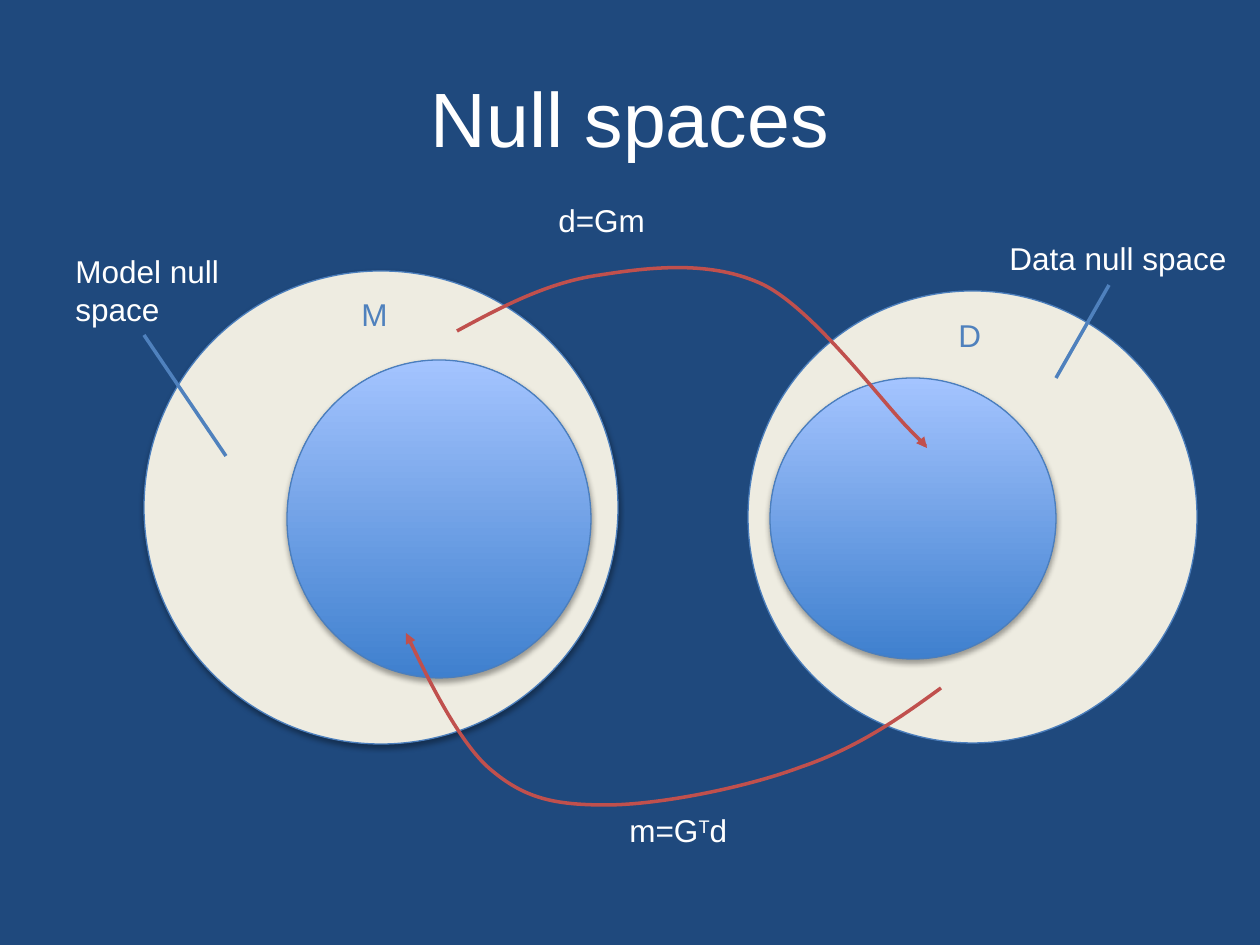
from lxml import etree
from pptx import Presentation
from pptx.dml.color import RGBColor
from pptx.enum.shapes import MSO_CONNECTOR, MSO_SHAPE
from pptx.enum.text import MSO_ANCHOR, MSO_AUTO_SIZE, PP_ALIGN
from pptx.oxml import parse_xml
from pptx.oxml.ns import nsdecls, qn
from pptx.util import Pt

OVAL = MSO_SHAPE.OVAL
STRAIGHT = MSO_CONNECTOR.STRAIGHT
TOP, MIDDLE = MSO_ANCHOR.TOP, MSO_ANCHOR.MIDDLE
LEFT, CENTER = PP_ALIGN.LEFT, PP_ALIGN.CENTER
GROW, FIXED = MSO_AUTO_SIZE.SHAPE_TO_FIT_TEXT, MSO_AUTO_SIZE.NONE

PX = 914400 / 126
NAVY, WHITE, CREAM = "1F497D", "FFFFFF", "EEECE1"
BLUE, OUTLINE, RED = "4F81BD", "4B7EBC", "C0504D"
GRADIENT = ("3F80CE", "A4C4FF")
SHADOW = f"""<a:effectLst {nsdecls('a')}>
  <a:outerShdw blurRad="40000" dist="23000" dir="5400000" rotWithShape="0">
    <a:srgbClr val="000000"><a:alpha val="35000"/></a:srgbClr>
  </a:outerShdw>
</a:effectLst>"""


def emu(*lengths):
    return [round(length * PX) for length in lengths]


def rgb(color):
    return RGBColor.from_string(color)


def add_span(para, text, size=18, color=WHITE, font="Arial", raised=False):
    span = para.add_run()
    span.text = text
    span.font.size = Pt(size)
    span.font.name = font
    span.font.color.rgb = rgb(color)
    if raised:
        span._r.get_or_add_rPr().set("baseline", "30000")


def set_line(shape, color, width):
    shape.line.color.rgb = rgb(color)
    shape.line.width = Pt(width)


def bend(shape):
    """Turn each three straight segments of a freeform into one Bezier curve."""
    outline = next(shape._element.iter(qn("a:path")))
    segments = outline.findall(qn("a:lnTo"))
    for first in range(0, len(segments), 3):
        curve = etree.SubElement(outline, qn("a:cubicBezTo"))
        for segment in segments[first:first + 3]:
            curve.append(segment[0])
            outline.remove(segment)


class SlideBuilder:
    def __init__(self, width, height, background):
        self.deck = Presentation()
        self.deck.slide_width, self.deck.slide_height = emu(width, height)
        self.page = self.deck.slides.add_slide(self.deck.slide_layouts[6])
        self.page.background.fill.solid()
        self.page.background.fill.fore_color.rgb = rgb(background)
        self.shapes = self.page.shapes

    def text(self, place, *parts, anchor=TOP, align=LEFT, fit=GROW, **style):
        """Add a text box; a part is a string or a (string, format) pair."""
        frame = self.shapes.add_textbox(*emu(*place)).text_frame
        frame.word_wrap = True
        frame.auto_size = fit
        frame.vertical_anchor = anchor
        para = frame.paragraphs[0]
        para.alignment = align
        for part in parts:
            words, extra = (part, {}) if isinstance(part, str) else part
            add_span(para, words, **style, **extra)

    def oval(self, place, fill, shadow=True):
        """Fill with one colour, or a (bottom, top) pair as a gradient."""
        shape = self.shapes.add_shape(OVAL, *emu(*place))
        if isinstance(fill, str):
            shape.fill.solid()
            shape.fill.fore_color.rgb = rgb(fill)
        else:
            shape.fill.gradient()
            shape.fill.gradient_angle = 90
            for stop, color in zip(shape.fill.gradient_stops, fill):
                stop.color.rgb = rgb(color)
        set_line(shape, OUTLINE, 0.75)
        shape.shadow.inherit = False
        if shadow:
            properties = shape._element.spPr
            properties.replace(properties.find(qn("a:effectLst")), parse_xml(SHADOW))

    def curved_arrow(self, start, *points):
        builder = self.shapes.build_freeform(*start, scale=PX)
        builder.add_line_segments(points, close=False)
        shape = builder.convert_to_shape()
        bend(shape)
        shape.fill.background()
        shape.shadow.inherit = False
        set_line(shape, RED, 2)
        etree.SubElement(shape.line._get_or_add_ln(), qn("a:tailEnd"), type="triangle")

    def pointer(self, start, end):
        line = self.shapes.add_connector(STRAIGHT, *emu(*start, *end))
        set_line(line, BLUE, 2)
        etree.SubElement(line._element.spPr, qn("a:effectLst"))


def main():
    slide = SlideBuilder(1260, 945, NAVY)
    slide.text((63, 38, 1134, 158), "Null spaces", size=44,
               anchor=MIDDLE, align=CENTER, fit=FIXED)

    slide.oval((144, 271, 474, 473), CREAM)
    slide.oval((748, 291, 449, 452), CREAM, shadow=False)
    slide.text((349, 289, 52, 50), "M", color=BLUE)
    slide.text((946, 310, 52, 50), "D", color=BLUE)
    slide.oval((770, 378, 286, 281), GRADIENT)
    slide.oval((287, 360, 304, 318), GRADIENT)

    slide.curved_arrow((457, 331),
                       (503, 306), (549, 282), (600, 275),
                       (651, 267), (712, 260), (764, 285),
                       (815, 311), (882, 402), (910, 430),
                       (936, 456), (927, 448), (927, 448))
    slide.curved_arrow((941, 688),
                       (900, 718), (857, 748), (801, 767),
                       (745, 788), (658, 805), (606, 805),
                       (553, 805), (524, 798), (490, 769),
                       (457, 741), (406, 633), (406, 633))
    slide.text((546, 195, 242, 50), "d=Gm")
    slide.text((617, 805, 170, 50), "m=G", ("T", {"raised": True}), "d")

    slide.text((63, 246, 198, 89), "Model null space")
    slide.pointer((144, 335), (226, 456))
    slide.text((997, 233, 263, 50), "Data null space")
    slide.pointer((1109, 285), (1056, 378))
    slide.deck.save("out.pptx")


if __name__ == "__main__":
    main()
